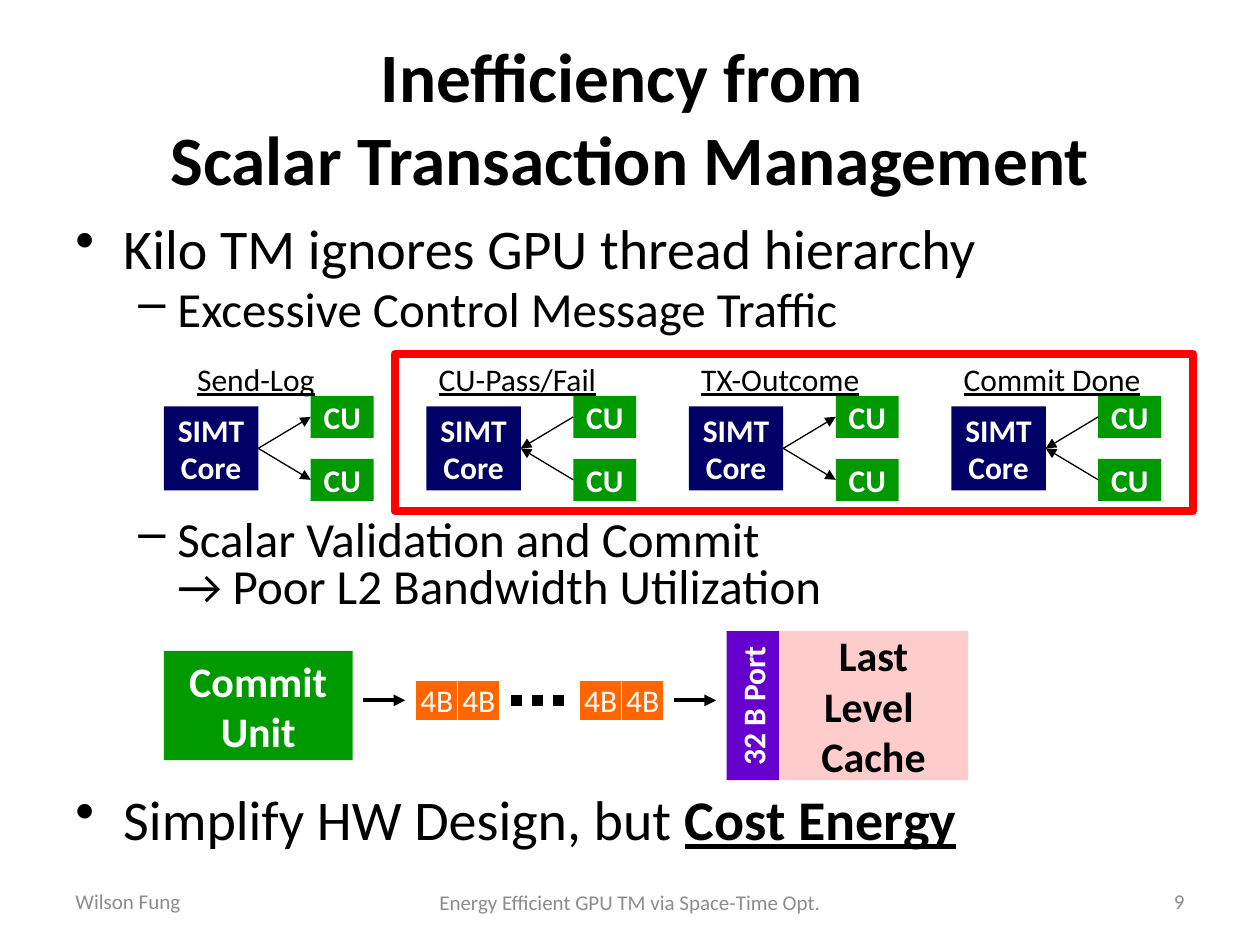
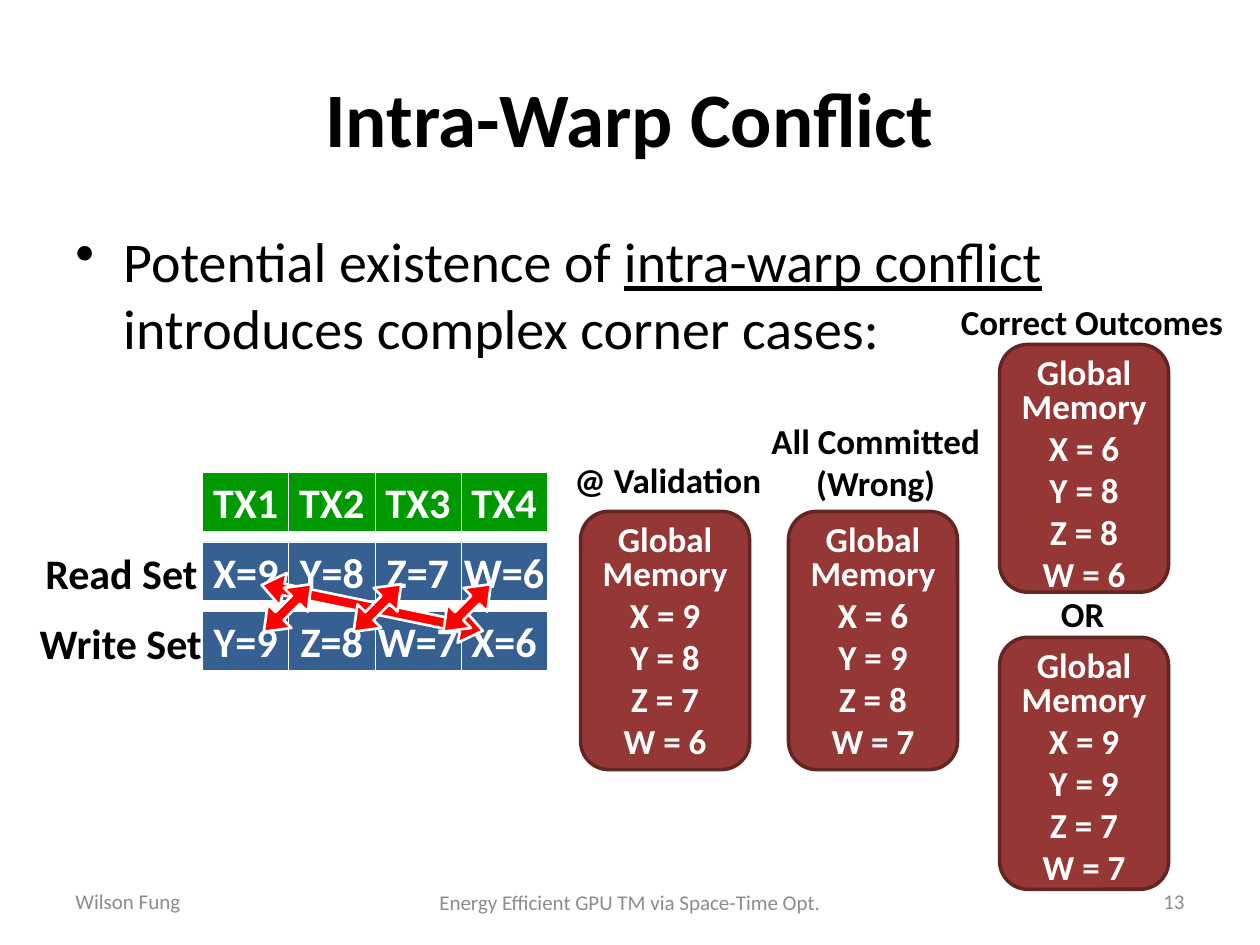
from dataclasses import dataclass
from itertools import product

from lxml import etree
from pptx import Presentation
from pptx.dml.color import RGBColor
from pptx.enum.dml import MSO_LINE
from pptx.enum.shapes import MSO_CONNECTOR, MSO_SHAPE
from pptx.enum.text import MSO_ANCHOR, PP_ALIGN
from pptx.oxml.ns import qn
from pptx.util import Inches, Pt

RECT, ROUND = MSO_SHAPE.RECTANGLE, MSO_SHAPE.ROUNDED_RECTANGLE
SWAP = MSO_SHAPE.LEFT_RIGHT_ARROW
STRAIGHT = MSO_CONNECTOR.STRAIGHT
DOTS = MSO_LINE.ROUND_DOT
LEFT, MID, RIGHT = PP_ALIGN.LEFT, PP_ALIGN.CENTER, PP_ALIGN.RIGHT
TOP, CENTER = MSO_ANCHOR.TOP, MSO_ANCHOR.MIDDLE

COLS, ROWS = 120, 90
CELL = Inches(10) / COLS


@dataclass(frozen=True)
class Theme:
    font: str = "Calibri"
    black: str = "000000"
    white: str = "FFFFFF"
    gray: str = "8C8C8C"
    navy: str = "000066"
    green: str = "009900"
    pink: str = "FFCCCC"
    purple: str = "6600CC"
    orange: str = "FF6600"
    red: str = "FF0000"
    blue: str = "376092"
    brick: str = "953735"
    wine: str = "632523"
    title: float = 44
    tight: float = 39.6
    body: float = 32
    sub: float = 28
    large: float = 24
    note: float = 20
    small: float = 18
    foot: float = 12


def grid(*cells):
    """Turn grid cells into slide lengths."""
    return [round(cell * CELL) for cell in cells]


def put(item, form):
    for key, value in form.items():
        setattr(item, key, value)


class Deck:
    def __init__(self, theme):
        self.theme = theme
        self.file = Presentation()
        put(self.file, {"slide_width": round(COLS * CELL),
                        "slide_height": round(ROWS * CELL)})

    def page(self, title, size, number):
        """Start a slide with its title and footers."""
        look = self.theme
        self.slide = self.file.slides.add_slide(self.file.slide_layouts[6])
        self.label((6, 3.6, 108, 15), [title], size, bold=True, align=MID,
                   anchor=CENTER, wrap=True)
        for box, words, align in (
                ((6, 83.4, 28, 4.8), "Wilson Fung", LEFT),
                ((38.3, 83.75, 43.4, 4.4),
                 "Energy Efficient GPU TM via Space-Time Opt.", MID),
                ((86, 83.4, 28, 4.8), number, RIGHT)):
            self.label(box, [words], look.foot, look.gray, align=align,
                       anchor=CENTER, wrap=True)

    def letter(self, shape, paras, size, color, bold=False, under=False,
               align=MID, anchor=CENTER, wrap=False, pad=None):
        """Fill a frame; a paragraph is a string or a list of (words, font)."""
        frame = shape.text_frame
        put(frame, {"word_wrap": wrap, "vertical_anchor": anchor})
        if pad is not None:
            put(frame, {"margin_left": pad, "margin_right": pad})
        base = {"name": self.theme.font, "size": Pt(size), "bold": bold,
                "underline": under}
        for i, runs in enumerate(paras):
            para = frame.add_paragraph() if i else frame.paragraphs[0]
            para.alignment = align
            if isinstance(runs, str):
                runs = [(runs, {})]
            for words, form in runs:
                for j, line in enumerate(words.split("\n")):
                    if j:
                        para.add_line_break()
                    run = para.add_run()
                    run.text = line
                    put(run.font, base | form)
                    run.font.color.rgb = RGBColor.from_string(color)
        return frame.paragraphs

    def label(self, box, paras, size, color=None, align=LEFT, anchor=TOP,
              **form):
        shape = self.slide.shapes.add_textbox(*grid(*box))
        return self.letter(shape, paras, size, color or self.theme.black,
                           align=align, anchor=anchor, **form)

    def points(self, box, items, pitch=1.0):
        """Add a bullet list; an item is (level, points before, text)."""
        look = self.theme
        paras = self.label(box, [item[2] for item in items], look.body,
                           wrap=True)
        for para, (level, gap, _) in zip(paras, items):
            put(para, {"level": level, "line_spacing": pitch,
                       "space_before": Pt(gap)})
            for run in para.runs:
                run.font.size = Pt((look.body, look.sub)[level])
            props = para._p.get_or_add_pPr()
            props.set("marL", str(Inches((0.38, 0.81)[level])))
            props.set("indent", str(-Inches((0.38, 0.31)[level])))
            etree.SubElement(props, qn("a:buChar"), char="•–"[level])

    def block(self, box, fill=None, edge=None, kind=RECT, turn=0):
        """Add a shape; edge is (colour, points)."""
        shape = self.slide.shapes.add_shape(kind, *grid(*box))
        shape.shadow.inherit = False
        shape.rotation = turn
        if fill:
            shape.fill.solid()
            shape.fill.fore_color.rgb = RGBColor.from_string(fill)
        else:
            shape.fill.background()
        if edge:
            shape.line.color.rgb = RGBColor.from_string(edge[0])
            shape.line.width = Pt(edge[1])
        else:
            shape.line.fill.background()
        return shape

    def tile(self, box, fill, paras, size, color=None, edge=None, turn=0,
             kind=RECT, bold=True, **form):
        """Add a shape that carries text."""
        shape = self.block(box, fill, edge, kind, turn)
        self.letter(shape, paras, size, color or self.theme.white, bold=bold,
                    **form)
        return shape

    def line(self, ends=(0, 0, 0, 0), width=0.75, dash=None, head=True):
        link = self.slide.shapes.add_connector(STRAIGHT, *grid(*ends))
        put(link.line, {"width": Pt(width), "dash_style": dash})
        link.line.color.rgb = RGBColor.from_string(self.theme.black)
        props = link._element.spPr
        if head:
            etree.SubElement(props.find(qn("a:ln")), qn("a:tailEnd"),
                             type="triangle")
        etree.SubElement(props, qn("a:effectLst"))
        return link

    def link(self, start, end):
        """Join (shape, side) to (shape, side) with an arrow."""
        arrow = self.line()
        arrow.begin_connect(*start)
        arrow.end_connect(*end)

    def message(self, x, name, shift, width, sent):
        """Draw a core and its two commit units, with arrows either way."""
        look = self.theme
        core = (self.tile((x, 38.7, 9, 8), look.navy, ["SIMT", "Core"],
                          look.small), 3)
        for y in (37.7, 43.7):
            unit = (self.tile((x + 14, y, 6, 4), look.green, ["CU"],
                              look.small), 1)
            self.link(*((core, unit) if sent else (unit, core)))
        self.label((x + shift, 33.7, width, 4.8), [name], look.small,
                   under=True)

    def memory(self, x, y, high, values):
        look = self.theme
        lines = [f"{name} = {value}" for name, value in zip("XYZW", values)]
        shape = self.tile((x, y, 16.1, high), look.brick,
                          ["Global Memory", *lines], look.note,
                          edge=(look.wine, 2), kind=ROUND, anchor=TOP,
                          wrap=True)
        shape.text_frame.paragraphs[0].line_spacing = 0.8


def scalar(deck):
    look = deck.theme
    deck.page("Inefficiency from \nScalar Transaction Management", look.tight,
              "9")
    deck.points((6, 21, 108, 63.7), [
        (0, 6.4, "Kilo TM ignores GPU thread hierarchy"),
        (1, 5.6, "Excessive Control Message Traffic"),
        (1, 104.4, "Scalar Validation and Commit \n"
                   "→ Poor L2 Bandwidth Utilization"),
        (0, 105, [("Simplify HW Design, but ", {}),
                  ("Cost Energy", {"bold": True, "underline": True})]),
    ], 0.8)

    left = 15.6
    for i, step in enumerate((("Send-Log", 2, 15.4, True),
                              ("CU-Pass/Fail", 0, 20, False),
                              ("TX-Outcome", 0, 19.4, True),
                              ("Commit Done", 0, 20.8, False))):
        deck.message(left + 25 * i, *step)
    deck.block((37.6, 33.7, 76, 15), edge=(look.red, 4.5))

    deck.tile((left, 62, 18, 10.4), look.green, ["Commit", "Unit"], look.large)
    deck.tile((74.2, 60.1, 18, 14.2), look.pink, ["Last", "Level ", "Cache"],
              look.large, look.black)
    deck.tile((64.6, 64.7, 14.2, 5), look.purple, ["32 B Port"], look.small,
              turn=270)
    for pair, part in product((39.6, 55.2), (0, 4)):
        deck.tile((pair + part, 64.8, 4, 3.8), look.orange, ["4B"], look.small,
                  edge=(look.white, 0.75), bold=False)
    flow = 66.7
    for x in (34.6, 64.2):
        deck.line((x, flow, x + 4, flow), 2.25)
    deck.line((48.7, flow, 54.4, flow), 6, DOTS, head=False)


def warp(deck):
    look = deck.theme
    deck.page("Intra-Warp Conflict", look.title, "13")
    deck.points((6, 21, 108, 16.4), [
        (0, 6.4, [("Potential existence of ", {}),
                  ("intra-warp conflict ", {"underline": True}),
                  ("introduces complex corner cases:", {})])])

    sets = (("TX1", "TX2", "TX3", "TX4"),
            ("X=9", "Y=8", "Z=7", "W=6"),
            ("Y=9", "Z=8", "W=7", "X=6"))
    for row, names in enumerate(sets):
        for col, name in enumerate(names):
            deck.tile((19.3 + 8.2 * col, 45 + 6.6 * row, 8.2, 5.6),
                      look.blue if row else look.green, [name], look.large,
                      edge=(look.white, 0.25), wrap=True, pad=0)
    deck.label((3, 51.6, 17, 6), ["Read Set"], look.large, bold=True,
               align=RIGHT)
    deck.label((2.4, 58.2, 18, 6), ["Write Set"], look.large, bold=True,
               align=RIGHT)

    swaps = [(24.7, 21.5, 11.7)]
    swaps += [(24.2 + 8.55 * i, 6.4, 315) for i in range(3)]
    for x, wide, turn in swaps:
        arrow = deck.block((x, 56.3, wide, 3.2), look.red, (look.white, 1.5),
                           SWAP, turn)
        arrow.adjustments[0], arrow.adjustments[1] = 0.34, 0.66

    for place in ((55.3, 48.7, 24.6, (9, 8, 7, 6)),
                  (75.1, 48.7, 24.6, (6, 9, 8, 7)),
                  (95.2, 60.7, 24, (9, 9, 7, 7)),
                  (95.2, 32.8, 23.6, (6, 8, 8, 6))):
        deck.memory(*place)
    for box, paras in (
            ((53.4, 43.1, 20.4, 5.3), ["@ Validation"]),
            ((72.2, 39.4, 22.4, 9.2), ["All Committed", "(Wrong)"]),
            ((90.2, 28, 27.6, 5.3), ["Correct Outcomes"]),
            ((99.8, 55.8, 6.6, 5.3), ["OR"])):
        deck.label(box, paras, look.note, bold=True, align=MID)


def main():
    deck = Deck(Theme())
    scalar(deck)
    warp(deck)
    deck.file.save("out.pptx")


if __name__ == "__main__":
    main()
